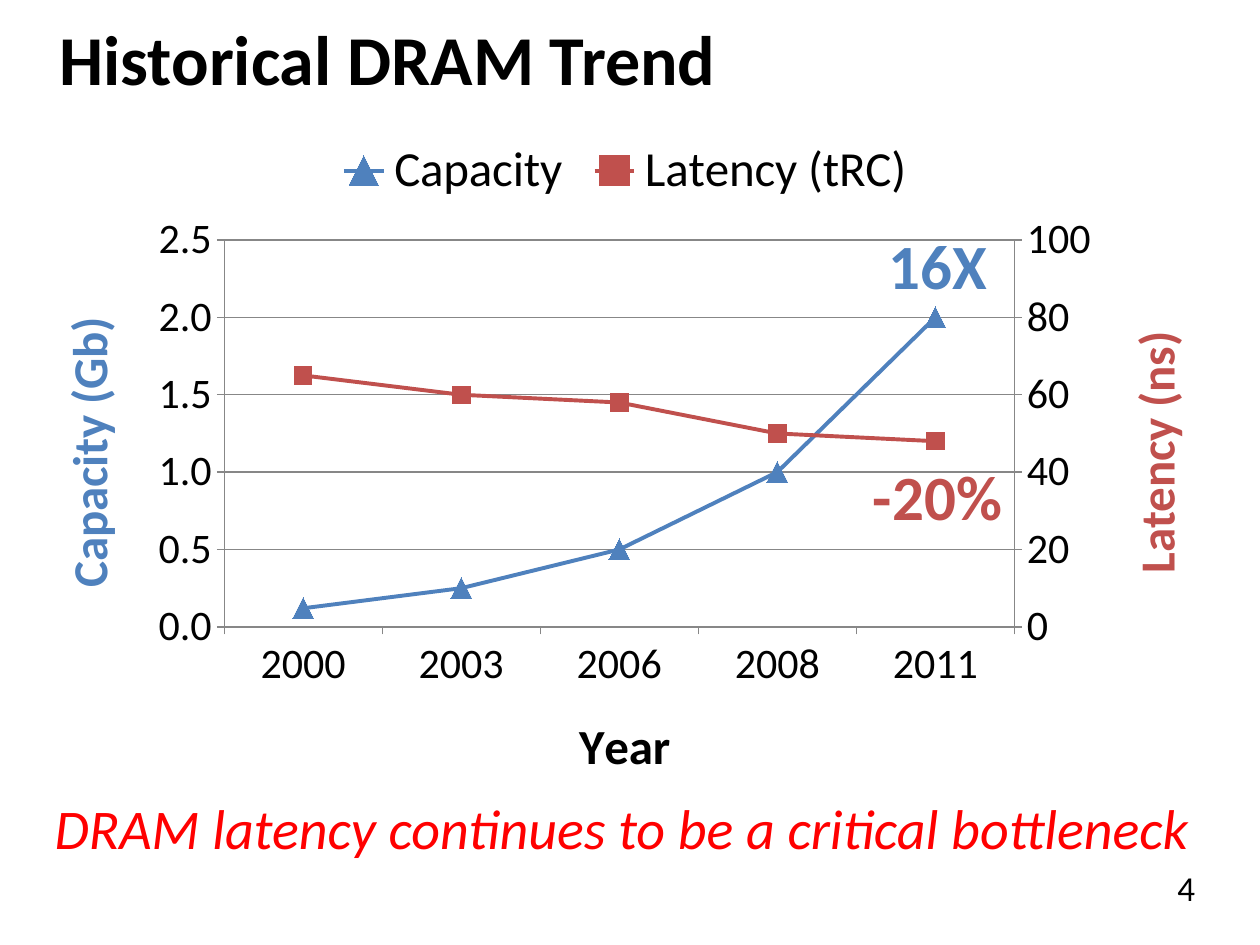
import copy

import pptx
import pptx.chart.axis
import pptx.chart.data
import pptx.dml.color
import pptx.enum.chart
import pptx.enum.text
import pptx.oxml
import pptx.oxml.ns
import pptx.util
from pptx.util import Cm, Pt

BLACK, BLUE, RED, GRAY, ALERT = "000000", "4F81BD", "C0504D", "878787", "FF0000"
ALIGN = pptx.enum.text.PP_ALIGN
MARKER = pptx.enum.chart.XL_MARKER_STYLE
qn = pptx.oxml.ns.qn


def rgb(color):
    return pptx.dml.color.RGBColor.from_string(color)


def set_value(parent, tag, value):
    parent.find(qn(tag)).set("val", str(value))


def set_plot_layout(plot_area, x, y, width, height):
    """Fix the inner plot area, in fractions of the chart."""
    for layout in plot_area.findall(qn("c:layout")):
        plot_area.remove(layout)
    settings = {"layoutTarget": "inner", "xMode": "edge", "yMode": "edge",
                "x": x, "y": y, "w": width, "h": height}
    items = "".join(f'<c:{tag} val="{value}"/>' for tag, value in settings.items())
    plot_area.insert(0, pptx.oxml.parse_xml(
        f'<c:layout {pptx.oxml.ns.nsdecls("c")}>'
        f"<c:manualLayout>{items}</c:manualLayout></c:layout>"))


def add_right_axis(plot_area):
    """Move the last series to a second value axis and return that axis."""
    left_lines = plot_area.find(qn("c:lineChart"))
    right_lines = copy.deepcopy(left_lines)
    left_lines.remove(left_lines.findall(qn("c:ser"))[-1])
    right_lines.remove(right_lines.findall(qn("c:ser"))[0])
    left_lines.addnext(right_lines)

    category_id, value_id = "50010", "50020"
    for axis_id, number in zip(right_lines.findall(qn("c:axId")), (category_id, value_id)):
        axis_id.set("val", number)
    value_axis = plot_area.find(qn("c:valAx"))
    right_category = copy.deepcopy(plot_area.find(qn("c:catAx")))
    right_value = copy.deepcopy(value_axis)
    value_axis.addnext(right_category)
    right_category.addnext(right_value)
    for axis, own, other in ((right_category, category_id, value_id),
                             (right_value, value_id, category_id)):
        set_value(axis, "c:axId", own)
        set_value(axis, "c:crossAx", other)
    hidden_axis = pptx.chart.axis.CategoryAxis(right_category)
    hidden_axis.has_title = False
    hidden_axis.visible = False
    set_value(right_value, "c:axPos", "r")
    set_value(right_value, "c:crosses", "max")
    return pptx.chart.axis.ValueAxis(right_value)


class SlideBuilder:
    font_name = "Calibri"

    def __init__(self, presentation):
        self.slide = presentation.slides.add_slide(presentation.slide_layouts[5])

    def style_font(self, font, size, color=BLACK, bold=False, italic=False):
        font.name = self.font_name
        font.size = Pt(size)
        font.color.rgb = rgb(color)
        font.bold = bold
        font.italic = italic

    def title(self, text, left, top, width, height):
        shape = self.slide.shapes.title
        shape.left, shape.top, shape.width, shape.height = map(Cm, (left, top, width, height))
        frame = shape.text_frame
        frame.text = text
        frame.auto_size = pptx.enum.text.MSO_AUTO_SIZE.NONE
        frame.vertical_anchor = pptx.enum.text.MSO_ANCHOR.MIDDLE
        frame.margin_left = Cm(1.2)
        paragraph = frame.paragraphs[0]
        paragraph.alignment = ALIGN.LEFT
        self.style_font(paragraph.runs[0].font, 40, bold=True)

    def text(self, text, left, top, width, height, size, align=ALIGN.CENTER, **style):
        shape = self.slide.shapes.add_textbox(*map(Cm, (left, top, width, height)))
        frame = shape.text_frame
        frame.word_wrap = True
        frame.text = text
        paragraph = frame.paragraphs[0]
        paragraph.alignment = align
        self.style_font(paragraph.runs[0].font, size, **style)

    def style_axis(self, axis, title, color=BLACK, vertical=True):
        frame = axis.axis_title.text_frame
        frame.text = title
        self.style_font(frame.paragraphs[0].runs[0].font, 28, color, bold=True)
        if vertical:
            body = axis.axis_title._element.find(".//" + qn("a:bodyPr"))
            body.set("rot", "-5400000")
            body.set("vert", "horz")
        self.style_font(axis.tick_labels.font, 24)
        axis.major_tick_mark = pptx.enum.chart.XL_TICK_MARK.OUTSIDE
        axis.minor_tick_mark = pptx.enum.chart.XL_TICK_MARK.NONE
        self.style_line(axis.format.line)

    def style_line(self, line, color=GRAY, width=0.75):
        line.color.rgb = rgb(color)
        line.width = Pt(width)

    def style_series(self, series, color, marker, size):
        series.smooth = False
        self.style_line(series.format.line, color, 2.25)
        series.marker.style = marker
        series.marker.size = size
        series.marker.format.fill.solid()
        series.marker.format.fill.fore_color.rgb = rgb(color)
        series.marker.format.line.fill.background()

    def trend_chart(self, left, top, width, height):
        data = pptx.chart.data.CategoryChartData()
        data.categories = ["2000", "2003", "2006", "2008", "2011"]
        data.add_series("Capacity", (0.12, 0.25, 0.5, 1, 2))
        data.add_series("Latency (tRC)", (65, 60, 58, 50, 48))
        chart = self.slide.shapes.add_chart(
            pptx.enum.chart.XL_CHART_TYPE.LINE_MARKERS,
            *map(Cm, (left, top, width, height)), data).chart
        chart.has_title = False
        chart.font.name = self.font_name
        chart.has_legend = True
        chart.legend.position = pptx.enum.chart.XL_LEGEND_POSITION.TOP
        chart.legend.include_in_layout = False
        self.style_font(chart.legend.font, 28)
        chart.plots[0].vary_by_categories = False
        capacity, latency = chart.plots[0].series
        self.style_series(capacity, BLUE, MARKER.TRIANGLE, 12)
        self.style_series(latency, RED, MARKER.SQUARE, 10)

        self.style_axis(chart.category_axis, "Year", vertical=False)
        left_axis = chart.value_axis
        self.style_axis(left_axis, "Capacity (Gb)", BLUE)
        self.set_scale(left_axis, 2.5, 0.5, "#,##0.0")
        plot_area = chart._chartSpace.find(".//" + qn("c:plotArea"))
        right_axis = add_right_axis(plot_area)
        self.style_axis(right_axis, "Latency (ns)", RED)
        self.set_scale(right_axis, 100, 20, "0")
        right_axis.has_major_gridlines = False
        left_axis.has_major_gridlines = True
        self.style_line(left_axis.major_gridlines.format.line)
        set_plot_layout(plot_area, 3.67 / width, 2.38 / height, 15.93 / width, 7.8 / height)

    def set_scale(self, axis, maximum, step, number_format):
        axis.minimum_scale = 0
        axis.maximum_scale = maximum
        axis.major_unit = step
        axis.tick_labels.number_format = number_format
        axis.tick_labels.number_format_is_linked = False


def main():
    presentation = pptx.Presentation()
    presentation.slide_width, presentation.slide_height = Cm(25.4), Cm(19.05)
    builder = SlideBuilder(presentation)
    builder.title("Historical DRAM Trend", 0, 0, 25.4, 2.33)
    builder.trend_chart(0.85, 2.46, 23.5, 13.55)
    for label, top, color in (("16X", 4.45, BLUE), ("-20%", 9.1, RED)):
        builder.text(label, 17.1, top, 3.6, 1.8, 36, color=color, bold=True)
    builder.text("DRAM latency continues to be a critical bottleneck",
                 0.85, 15.88, 23.7, 1.62, 32, ALIGN.LEFT, color=ALERT, italic=True)
    builder.text("4", 22.43, 17.35, 2.97, 1.7, 20)
    presentation.save("out.pptx")


if __name__ == "__main__":
    main()
